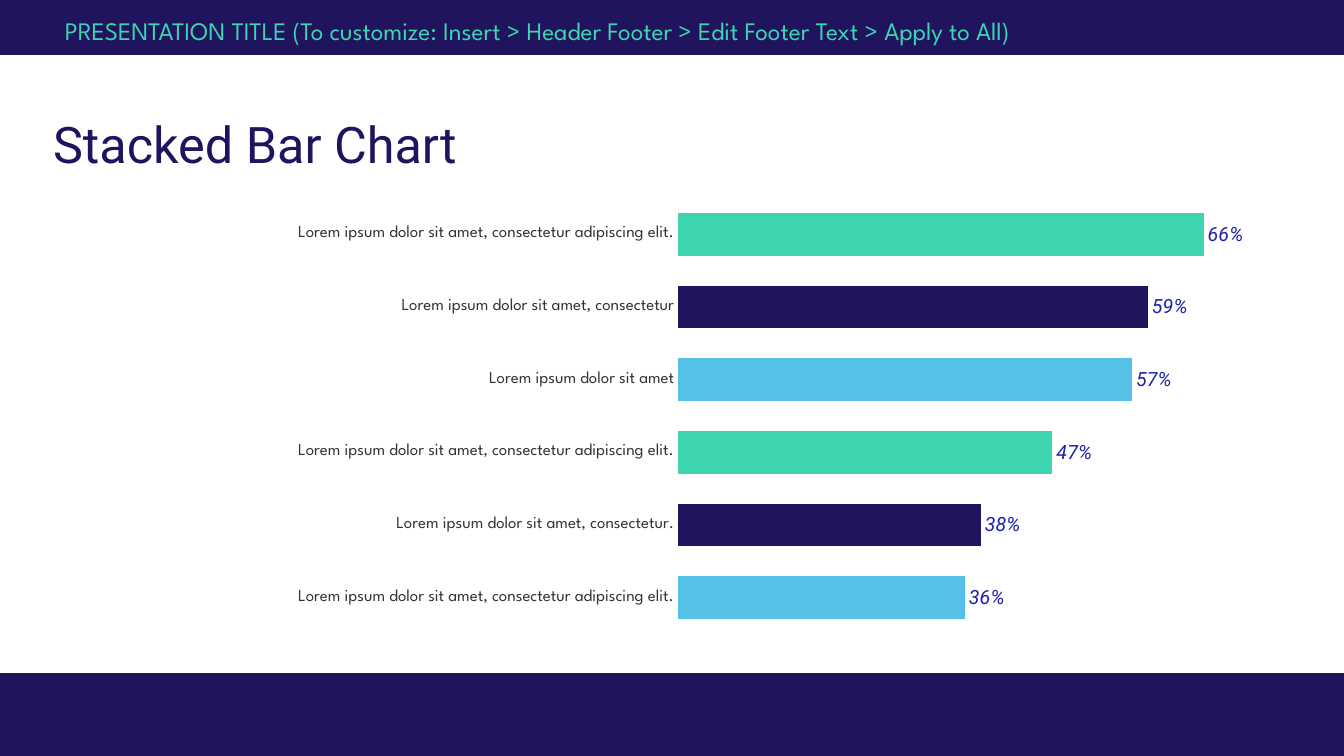
from itertools import cycle

from lxml.etree import SubElement
from pptx import Presentation
from pptx.chart.data import CategoryChartData
from pptx.dml.color import RGBColor
from pptx.enum.chart import XL_CHART_TYPE, XL_LABEL_POSITION, XL_TICK_MARK
from pptx.enum.shapes import MSO_SHAPE
from pptx.enum.text import MSO_ANCHOR, MSO_AUTO_SIZE, PP_ALIGN
from pptx.oxml.ns import qn
from pptx.util import Emu, Pt

EMU_PER_PX = 914400 / 100.8
SLIDE_WIDTH, SLIDE_HEIGHT = 1344, 756

COLORS = {
    "band": "21145F",
    "navy": "20145E",
    "green": "3CD5AF",
    "sky": "55C1E9",
    "value": "1E22AA",
    "category": "333333",
}
HEADING_FONT = "Roboto"
BODY_FONT = "League Spartan"

HEADER = ("PRESENTATION TITLE (To customize: Insert > Header Footer > "
          "Edit Footer Text > Apply to All)")
BARS = [
    ("Lorem ipsum dolor sit amet, consectetur adipiscing elit.", 0.66),
    ("Lorem ipsum dolor sit amet, consectetur", 0.59),
    ("Lorem ipsum dolor sit amet", 0.57),
    ("Lorem ipsum dolor sit amet, consectetur adipiscing elit.", 0.47),
    ("Lorem ipsum dolor sit amet, consectetur.", 0.38),
    ("Lorem ipsum dolor sit amet, consectetur adipiscing elit.", 0.36),
]
BAR_COLORS = ("green", "navy", "sky")
PLOT_AREA = {"x": 0.51, "y": 0.04, "w": 0.46, "h": 0.92}


def px(length):
    return Emu(round(length * EMU_PER_PX))


def box(*lengths):
    return [px(length) for length in lengths]


def color(name):
    return RGBColor.from_string(COLORS[name])


def style_font(font, name, size, color_name):
    font.name = name
    font.size = Pt(size)
    font.color.rgb = color(color_name)


def fill_solid(fill, color_name):
    fill.solid()
    fill.fore_color.rgb = color(color_name)


def add_band(slide, top, height):
    band = slide.shapes.add_shape(
        MSO_SHAPE.RECTANGLE, *box(0, top, SLIDE_WIDTH, height))
    band.shadow.inherit = False
    fill_solid(band.fill, "band")
    band.line.fill.background()


def add_header(slide):
    header = slide.shapes.add_textbox(*box(55, 10, 1165, 40))
    frame = header.text_frame
    frame.word_wrap = True
    frame.vertical_anchor = MSO_ANCHOR.MIDDLE
    frame.text = HEADER
    style_font(frame.paragraphs[0].runs[0].font, BODY_FONT, 18, "green")


def set_title(slide, text):
    title = slide.shapes.title
    title.left, title.top, title.width, title.height = box(53, 120, 1167, 110)
    frame = title.text_frame
    frame.auto_size = MSO_AUTO_SIZE.NONE
    frame.vertical_anchor = MSO_ANCHOR.TOP
    frame.margin_left = frame.margin_right = 0
    frame.margin_top = frame.margin_bottom = 0
    frame.text = text
    paragraph = frame.paragraphs[0]
    paragraph.alignment = PP_ALIGN.LEFT
    paragraph.line_spacing = 0.9
    style_font(paragraph.runs[0].font, HEADING_FONT, 36, "navy")


def place_plot_area(chart):
    """Fix the inner plot area as fractions of the chart frame."""
    plot_area = chart.element.find(".//" + qn("c:plotArea"))
    for old_layout in plot_area.findall(qn("c:layout")):
        plot_area.remove(old_layout)
    layout = SubElement(plot_area, qn("c:layout"))
    plot_area.insert(0, layout)
    manual = SubElement(layout, qn("c:manualLayout"))
    settings = [("layoutTarget", "inner"), ("xMode", "edge"), ("yMode", "edge")]
    settings += PLOT_AREA.items()
    for tag, value in settings:
        SubElement(manual, qn("c:" + tag)).set("val", str(value))


def style_axes(chart):
    category_axis = chart.category_axis
    category_axis.reverse_order = True
    category_axis.major_tick_mark = XL_TICK_MARK.NONE
    category_axis.format.line.fill.background()
    style_font(category_axis.tick_labels.font, BODY_FONT, 12, "category")

    value_axis = chart.value_axis
    value_axis.minimum_scale = 0
    value_axis.maximum_scale = 0.7
    value_axis.has_major_gridlines = False
    value_axis.visible = False


def style_bars(plot):
    plot.gap_width = 70
    plot.vary_by_categories = False
    series = plot.series[0]
    fill_solid(series.format.fill, "value")
    for index, (_, color_name) in enumerate(zip(BARS, cycle(BAR_COLORS))):
        fill_solid(series.points[index].format.fill, color_name)

    labels = series.data_labels
    labels.show_value = True
    labels.position = XL_LABEL_POSITION.OUTSIDE_END
    labels.number_format = "0%"
    labels.number_format_is_linked = False
    style_font(labels.font, HEADING_FONT, 14, "value")
    labels.font.italic = True


def add_bar_chart(slide):
    data = CategoryChartData(number_format="0%")
    data.categories = [label for label, _ in BARS]
    data.add_series("Series 1", [value for _, value in BARS])
    frame = slide.shapes.add_chart(
        XL_CHART_TYPE.BAR_CLUSTERED, *box(61, 179, 1211, 474), data)
    chart = frame.chart
    chart.has_legend = False
    chart.has_title = False
    style_font(chart.font, BODY_FONT, 14, "category")
    place_plot_area(chart)
    style_axes(chart)
    style_bars(chart.plots[0])


def main():
    presentation = Presentation()
    presentation.slide_width = px(SLIDE_WIDTH)
    presentation.slide_height = px(SLIDE_HEIGHT)
    title_only = presentation.slide_layouts[5]
    slide = presentation.slides.add_slide(title_only)
    add_band(slide, 0, 55)
    add_band(slide, 673, 83)
    add_header(slide)
    set_title(slide, "Stacked Bar Chart")
    add_bar_chart(slide)
    presentation.save("out.pptx")


if __name__ == "__main__":
    main()
